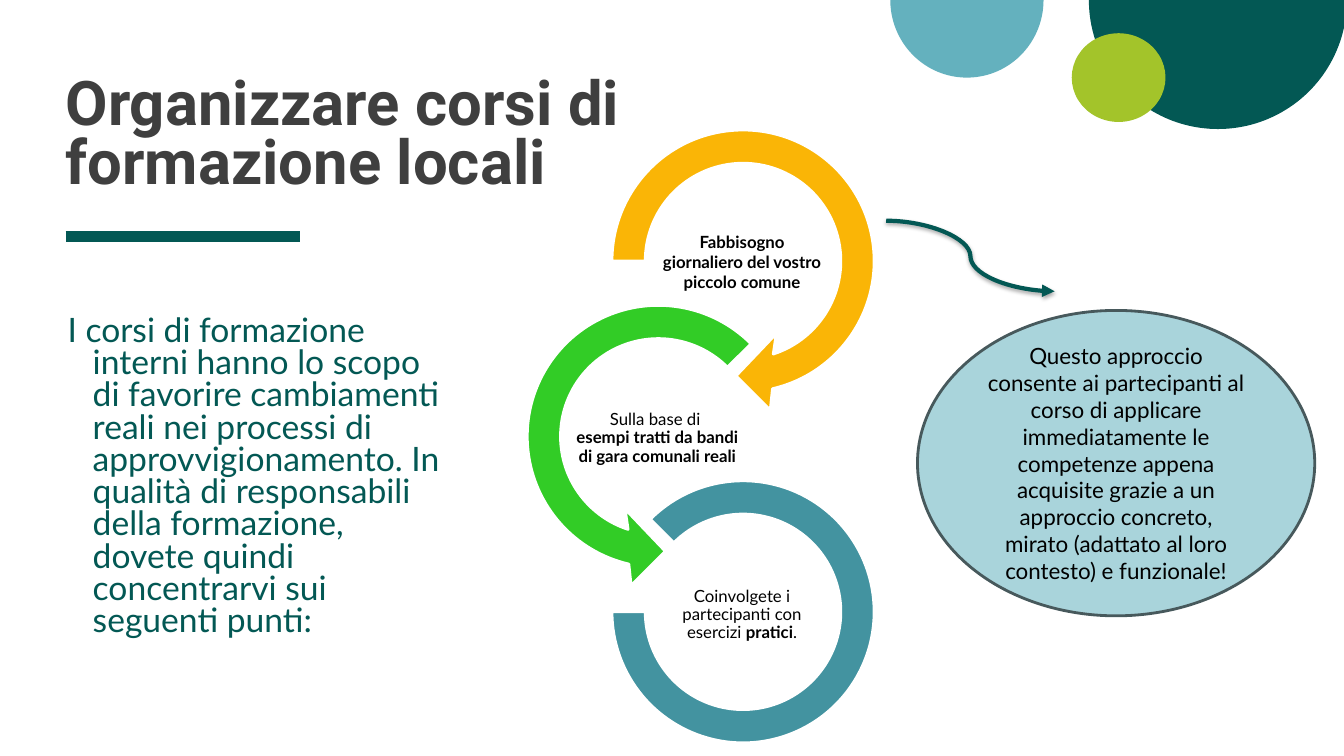
from math import cos, radians, sin, tan

from lxml import etree
from pptx import Presentation
from pptx.dml.color import RGBColor
from pptx.enum.shapes import MSO_CONNECTOR, MSO_SHAPE
from pptx.enum.text import MSO_ANCHOR, PP_ALIGN
from pptx.oxml import parse_xml
from pptx.oxml.ns import nsdecls, qn
from pptx.util import Inches, Pt

PIE, ELLIPSE, BLOCK_ARC = MSO_SHAPE.PIE, MSO_SHAPE.OVAL, MSO_SHAPE.BLOCK_ARC
STRAIGHT, CURVE = MSO_CONNECTOR.STRAIGHT, MSO_CONNECTOR.CURVE
TOP, MIDDLE, BOTTOM = MSO_ANCHOR.TOP, MSO_ANCHOR.MIDDLE, MSO_ANCHOR.BOTTOM
LEFT, CENTER = PP_ALIGN.LEFT, PP_ALIGN.CENTER

GREEN, BLACK, WHITE = "035854", "000000", "FFFFFF"
OUTER, INNER = 1.3, 0.97  # ring radii in inches
FRAME = 3.03  # side of the square around a ring arrow
ARROWHEAD = [(0.27, 1.48), (-0.07, 1.14), (0.33, 0.72)]  # from the ring centre


def rgb(hex_color):
    return RGBColor.from_string(hex_color)


def paint(sp, fill, line=None, width=2):
    sp.shadow.inherit = False
    sp.fill.solid()
    sp.fill.fore_color.rgb = rgb(fill)
    if line:
        sp.line.color.rgb = rgb(line)
        sp.line.width = Pt(width)
    else:
        sp.line.fill.background()


def add_shape(slide, kind, box, fill, line=None, adjustments=()):
    sp = slide.shapes.add_shape(kind, *map(Inches, box))
    for i, value in enumerate(adjustments):
        sp.adjustments[i] = value
    paint(sp, fill, line)
    return sp


def write(sp, runs, size, color, font="Lato", bold=None, align=LEFT,
          anchor=TOP, insets=(0, 0, 0, 0), spacing=None):
    """Fill a shape with one paragraph made of (text, bold) runs."""
    tf = sp.text_frame
    tf.word_wrap = True
    tf.vertical_anchor = anchor
    tf.margin_left, tf.margin_top, tf.margin_right, tf.margin_bottom = map(Inches, insets)
    p = tf.paragraphs[0]
    p.alignment = align
    if spacing:
        p.line_spacing = spacing
    p.font.size, p.font.name, p.font.bold = Pt(size), font, bold
    p.font.color.rgb = rgb(color)
    for text, run_bold in runs:
        if text == "\n":
            p.add_line_break()
            continue
        r = p.add_run()
        r.text = text
        if run_bold:
            r.font.bold = True
    return p


def add_text(slide, box, runs, size, color, **style):
    return write(slide.shapes.add_textbox(*map(Inches, box)), runs, size, color, **style)


def add_line(slide, kind, start, end, color, width):
    line = slide.shapes.add_connector(kind, *map(Inches, (*start, *end)))
    line.line.color.rgb = rgb(color)
    line.line.width = Pt(width)
    effects = etree.SubElement(line._element.spPr, qn("a:effectLst"))
    return line, effects


def add_corner_circles(slide, left, top):
    add_shape(slide, PIE, (left + 1.97, top - 1.28, 2.56, 2.56), GREEN, adjustments=(0, 107.96))
    add_shape(slide, PIE, (left, top - 0.77, 1.52, 1.54), "64B1BE", adjustments=(0, 108.52))
    add_shape(slide, ELLIPSE, (left + 1.8, top + 0.33, 0.93, 0.88), "A3C42A")


def add_heading(slide, left, top):
    add_text(slide, (left, top, 5.81, 1.74),
             [("Organizzare corsi di formazione locali", False)], 44, "3F3F3F",
             font="Roboto", bold=True, anchor=BOTTOM, spacing=0.8)
    rule_y = top + 2.14
    add_line(slide, STRAIGHT, (left, rule_y), (left + 2.33, rule_y), GREEN, 8)


def add_intro(slide, box):
    p = add_text(slide, box, [(
        "I corsi di formazione interni hanno lo scopo di favorire cambiamenti reali "
        "nei processi di approvvigionamento. In qualità di responsabili della "
        "formazione, dovete quindi concentrarvi sui seguenti punti:", False)],
        24, GREEN, insets=(0, 0.25, 0, 0), spacing=0.8)
    pPr = p._p.get_or_add_pPr()
    pPr.set("marL", str(Inches(0.5)))
    pPr.set("indent", str(Inches(-0.25)))


def arc_point(radius, angle):
    return radius * cos(angle), radius * sin(angle)


def arc_curves(radius, start, end, count=3):
    """Split an arc into Bézier curves, each as two control points and an end."""
    step = radians(end - start) / count
    reach = radius * 4 / 3 * tan(step / 4)
    curves = []
    for i in range(count):
        a = radians(start) + i * step
        b = a + step
        (ax, ay), (bx, by) = arc_point(radius, a), arc_point(radius, b)
        curves.append([(ax - reach * sin(a), ay + reach * cos(a)),
                       (bx + reach * sin(b), by - reach * cos(b)), (bx, by)])
    return curves


def add_ring_arrow(slide, cx, cy, start, fill, side):
    """Draw a ring ending in an arrowhead; side -1 mirrors it left to right."""
    half = FRAME / 2
    x, y, size = Inches(cx - half), Inches(cy - half), Inches(FRAME)
    builder = slide.shapes.build_freeform(x, y, scale=1.0)
    builder.add_line_segments([(x + size, y), (x + size, y + size), (x, y + size)])
    sp = builder.convert_to_shape()
    outline = next(sp._element.iter(qn("a:path")))
    for corner in list(outline):
        outline.remove(corner)

    def step(tag, points):
        parent = etree.SubElement(outline, qn(tag))
        for px, py in points:
            etree.SubElement(parent, qn("a:pt"), x=str(Inches(half + side * px)),
                             y=str(Inches(half + py)))

    step("a:moveTo", [arc_point(OUTER, radians(start))])
    for curve in arc_curves(OUTER, start, 437):
        step("a:cubicBezTo", curve)
    for point in ARROWHEAD + [arc_point(INNER, radians(432))]:
        step("a:lnTo", [point])
    for curve in arc_curves(INNER, 432, start):
        step("a:cubicBezTo", curve)
    step("a:close", [])
    paint(sp, fill, WHITE)


def add_ring_label(slide, cx, cy, runs, spacing=None):
    add_text(slide, (cx - 0.84, cy - 0.42, 1.68, 0.84), runs, 12, BLACK, align=CENTER,
             anchor=MIDDLE, insets=(0.01,) * 4, spacing=spacing)


def add_ring_chain(slide, left, top):
    right_x, left_x = left + 2.15, left + 1.31
    first_y, second_y, third_y = (top + OUTER + 1.74 * i for i in range(3))
    add_ring_arrow(slide, right_x, first_y, 180, "FAB506", 1)
    add_ring_label(slide, right_x - 0.01, first_y + 0.01,
                   [("Fabbisogno giornaliero del vostro piccolo comune", True)])
    add_ring_arrow(slide, left_x, second_y, 225, "32CC26", -1)
    add_ring_label(slide, left_x - 0.01, second_y + 0.02, [
        ("Sulla base di ", False), ("\n", False),
        ("esempi tratti da bandi di gara comunali reali", True)], 0.9)
    add_shape(slide, BLOCK_ARC, (right_x - OUTER, third_y - OUTER, 2 * OUTER, 2 * OUTER),
              "4393A0", WHITE, (135, 108, 0.127))
    add_ring_label(slide, right_x - 0.01, third_y + 0.03, [
        ("Coinvolgete i partecipanti con esercizi ", False),
        ("pratici", True), (".", False)], 0.9)


def add_outcome(slide, box):
    """Place the closing ellipse and the curved arrow that leads to it."""
    left, top = box[:2]
    line, effects = add_line(slide, CURVE, (left - 0.31, top - 0.89),
                             (left + 1.36, top - 0.19), GREEN, 3)
    etree.SubElement(line.line._get_or_add_ln(), qn("a:tailEnd"), type="triangle")
    effects.append(parse_xml(
        f'<a:outerShdw {nsdecls("a")} blurRad="40000" dist="23000" dir="5400000" '
        'rotWithShape="0"><a:srgbClr val="000000"><a:alpha val="35000"/></a:srgbClr>'
        '</a:outerShdw>'))
    sp = add_shape(slide, ELLIPSE, box, "A9D4DB", "47595C")
    write(sp, [(
        "Questo approccio consente ai partecipanti al corso di applicare immediatamente "
        "le competenze appena acquisite grazie a un approccio concreto, mirato "
        "(adattato al loro contesto) e funzionale!", False)],
        16, BLACK, align=CENTER, anchor=MIDDLE, insets=(0.1, 0.05, 0.1, 0.05))


def main():
    prs = Presentation()
    prs.slide_width, prs.slide_height = Inches(13.33), Inches(7.5)
    slide = prs.slides.add_slide(prs.slide_layouts[6])
    add_corner_circles(slide, 8.83, 0)
    add_heading(slide, 0.65, 0.21)
    add_intro(slide, (0.42, 2.89, 3.94, 4.4))
    add_ring_chain(slide, 5.22, 1.29)
    add_outcome(slide, (9.1, 3.08, 3.94, 3.03))
    prs.save("out.pptx")


if __name__ == "__main__":
    main()
